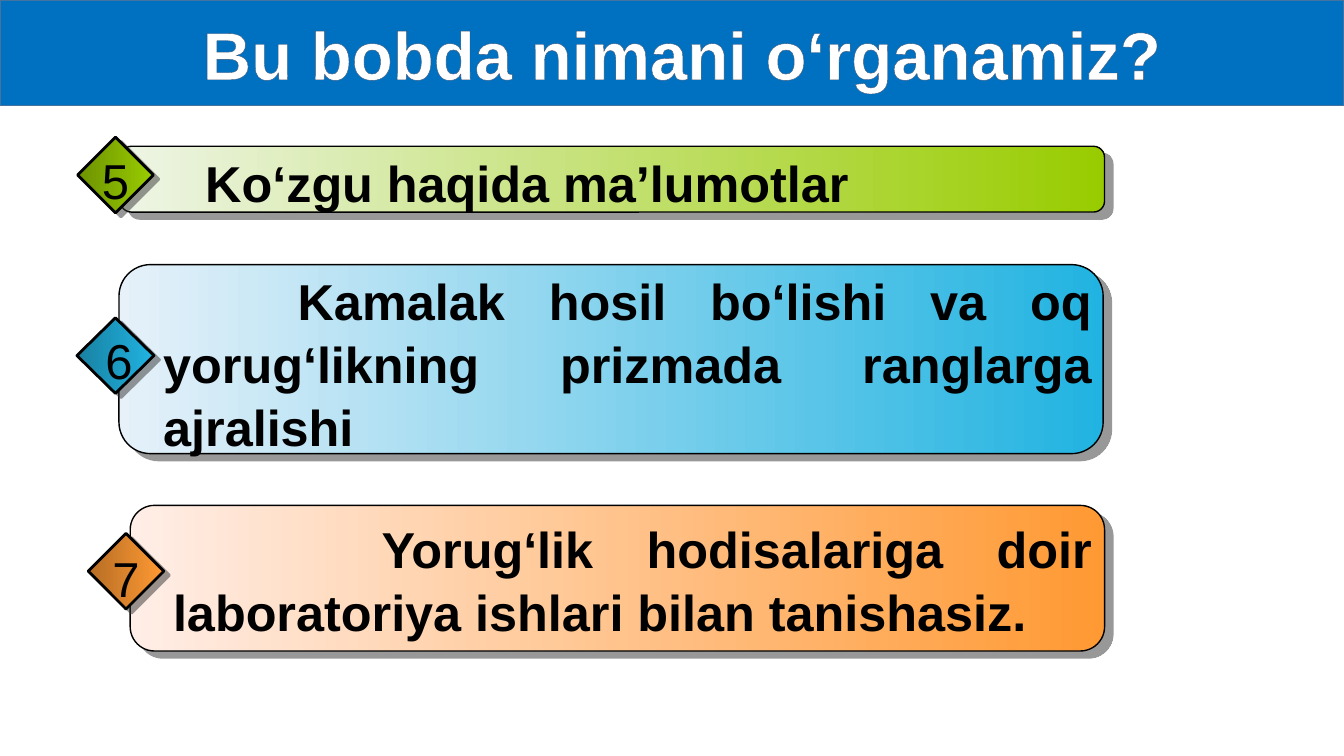
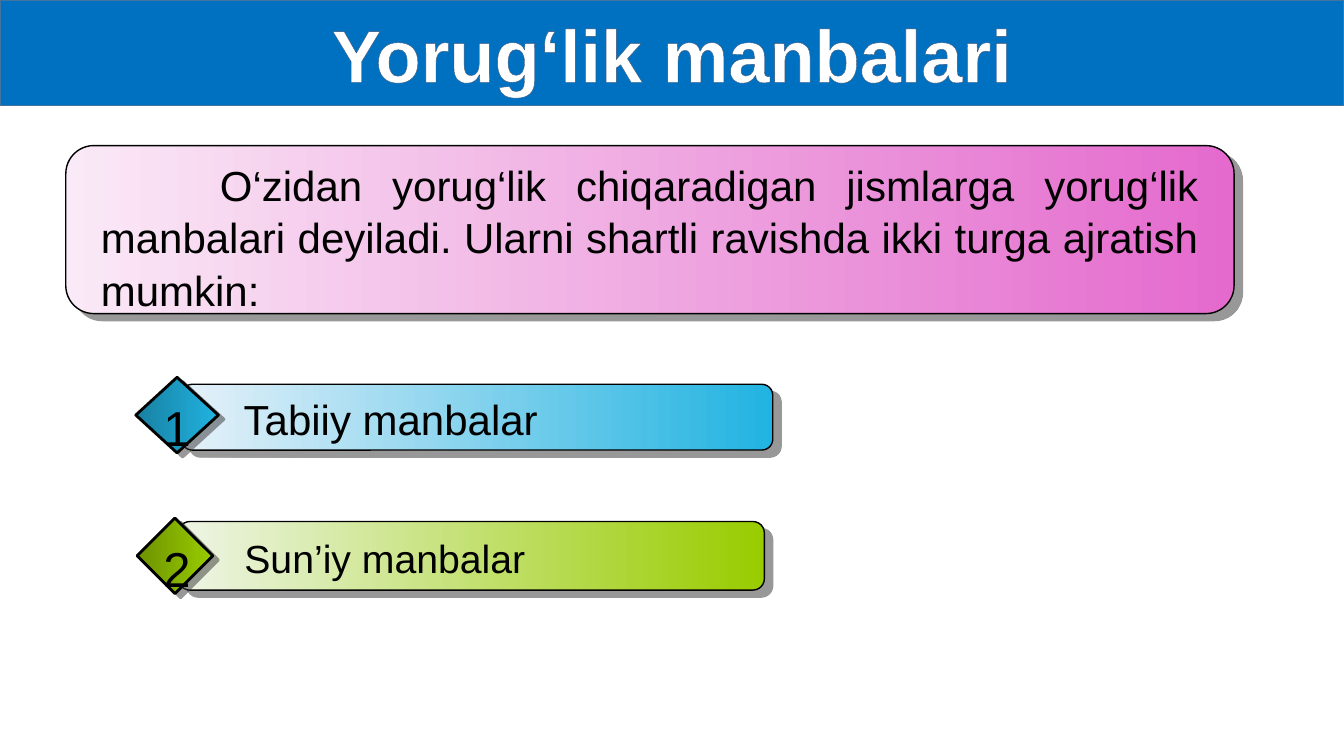
from lxml import etree
from pptx import Presentation
from pptx.dml.color import RGBColor
from pptx.enum.shapes import MSO_SHAPE
from pptx.enum.text import MSO_ANCHOR, MSO_AUTO_SIZE, PP_ALIGN
from pptx.oxml.ns import qn
from pptx.util import Pt

ROUND, DIAMOND = MSO_SHAPE.ROUNDED_RECTANGLE, MSO_SHAPE.DIAMOND
CENTER, JUSTIFY = PP_ALIGN.CENTER, PP_ALIGN.JUSTIFY
TOP, MIDDLE = MSO_ANCHOR.TOP, MSO_ANCHOR.MIDDLE

WIDTH, HEIGHT, BAND = 960, 540, 75.6
FONT = "Arial"
HEX = {
    "band": "0070C0", "edge": "43739E", "rim": "3A5274",
    "white": "FFFFFF", "black": "000000", "shade": "333333",
}
# Per theme: pale start of the bar, dark start of the diamond, shared end
THEMES = {
    "green": ("EEF5E6", "6D9200", "99CC00"),
    "blue": ("E6F1F9", "1880A1", "21B3E1"),
    "orange": ("FFEEE7", "B66D24", "FF9933"),
    "pink": ("FAE9F6", None, "E46ACD"),
}

# Boxes are left, top, width, height; mark is digit, centre x, top, diamond box
SLIDES = [
    {
        "title": "Bu bobda nimani o‘rganamiz?", "size": 48, "inset": 22,
        "items": [
            {"theme": "blue", "bar": (85, 189, 703, 135),
             "text": "Kamalak hosil bo‘lishi va oq yorug‘likning prizmada "
                     "ranglarga ajralishi",
             "box": (109.5, 188, 678, 138), "size": 36, "bold": True, "indent": 96,
             "mark": ("6", 85, 231, (55, 227, 55, 54))},
            {"theme": "orange", "bar": (93, 361, 696, 104),
             "text": "Yorug‘lik hodisalariga doir laboratoriya ishlari bilan "
                     "tanishasiz.",
             "box": (116.5, 365, 671, 94), "size": 36, "bold": True, "indent": 149,
             "mark": ("7", 90, 386.5, (63, 381, 54, 54))},
            {"theme": "green", "bar": (86, 104.5, 703, 47),
             "text": "Ko‘zgu haqida ma’lumotlar",
             "box": (109.5, 103.5, 658, 51), "size": 36, "bold": True, "indent": 30,
             "mark": ("5", 82.5, 102, (55.5, 98, 54, 54))},
        ],
    },
    {
        "title": "Yorug‘lik manbalari", "size": 52.8, "inset": 7.2,
        "items": [
            {"theme": "pink", "bar": (47, 104, 834.5, 120),
             "text": "O‘zidan yorug‘lik chiqaradigan jismlarga yorug‘lik "
                     "manbalari deyiladi. Ularni shartli ravishda ikki turga "
                     "ajratish mumkin:",
             "box": (65, 109, 798.5, 117), "size": 30, "indent": 85},
            {"theme": "blue", "bar": (129.5, 274.5, 422.5, 47),
             "text": "Tabiiy manbalar",
             "box": (142, 276.5, 397, 44), "size": 30, "indent": 25,
             "mark": ("1", 126.5, 279, (97, 269.5, 59, 54))},
            {"theme": "green", "bar": (127.5, 372.5, 418.5, 49),
             "text": "Sun’iy manbalar",
             "box": (152, 377, 394.5, 41), "size": 28, "indent": 15.5,
             "mark": ("2", 126.5, 379.5, (98, 370, 54, 54))},
        ],
    },
]


def color(name):
    return RGBColor.from_string(HEX.get(name, name))


def write(frame, text, size=30, bold=False, ink="black", align=JUSTIFY,
          indent=0, spacing=1.04, anchor=TOP, wrap=True):
    frame.word_wrap = wrap
    frame.auto_size = MSO_AUTO_SIZE.NONE
    frame.vertical_anchor = anchor
    para = frame.paragraphs[0]
    para.alignment, para.line_spacing = align, spacing
    if indent:
        para._p.get_or_add_pPr().set("indent", str(Pt(indent)))
    run = para.add_run()
    run.text = text
    font = run.font
    font.name, font.size, font.bold = FONT, Pt(size), bold
    font.color.rgb = color(ink)
    return run


def label(slide, box, text, **style):
    area = slide.shapes.add_textbox(*map(Pt, box))
    write(area.text_frame, text, **style)


def shadow(shape, dist, angle):
    """Give the shape a hard, half-transparent shadow."""
    shape.shadow.inherit = False
    effects = shape._element.spPr.find(qn("a:effectLst"))
    outer = etree.SubElement(effects, qn("a:outerShdw"), blurRad="0",
                             dist=str(Pt(dist)), dir=str(angle * 60000),
                             algn="ctr", rotWithShape="0")
    shade = etree.SubElement(outer, qn("a:srgbClr"), val=HEX["shade"])
    etree.SubElement(shade, qn("a:alpha"), val="50000")


def glossy(slide, kind, box, start, end, line, dist, angle):
    """Draw an outlined shape with a left-to-right gradient and a shadow."""
    shape = slide.shapes.add_shape(kind, *map(Pt, box))
    shape.fill.gradient()
    shape.fill.gradient_angle = 0
    for stop, place, tone in zip(shape.fill.gradient_stops, (0, 1), (start, end)):
        stop.position, stop.color.rgb = place, color(tone)
    shape.line.color.rgb = color("black")
    shape.line.width = Pt(line)
    shadow(shape, dist, angle)


def heading(slide, text, size, inset):
    title = slide.shapes.title
    title.left, title.top, title.width, title.height = map(Pt, (0, 0, WIDTH, BAND))
    title.fill.solid()
    title.fill.fore_color.rgb = color("band")
    title.line.color.rgb = color("edge")
    title.line.width = Pt(1)
    frame = title.text_frame
    frame.margin_left = Pt(inset)
    run = write(frame, text, size=size, bold=True, ink="white", align=CENTER,
                spacing=1, anchor=MIDDLE)
    rim = etree.Element(qn("a:ln"), w=str(Pt(1)))
    fill = etree.SubElement(rim, qn("a:solidFill"))
    etree.SubElement(fill, qn("a:srgbClr"), val=HEX["rim"])
    run._r.get_or_add_rPr().insert(0, rim)


def entry(slide, item):
    pale, dark, full = THEMES[item["theme"]]
    glossy(slide, ROUND, item["bar"], pale, full, 1, 7.8, 40)
    if "mark" in item:
        digit, mid, top, box = item["mark"]
        glossy(slide, DIAMOND, box, dark, full, 2, 5, 37)
        label(slide, (mid - 17, top, 34, 50), digit, size=35, align=CENTER,
              wrap=False)
    label(slide, item["box"], item["text"], size=item["size"],
          bold=item.get("bold", False), indent=item["indent"])


def main():
    deck = Presentation()
    deck.slide_width, deck.slide_height = Pt(WIDTH), Pt(HEIGHT)
    for page in SLIDES:
        slide = deck.slides.add_slide(deck.slide_layouts[5])
        heading(slide, page["title"], page["size"], page["inset"])
        for item in page["items"]:
            entry(slide, item)
    deck.save("out.pptx")


if __name__ == "__main__":
    main()
